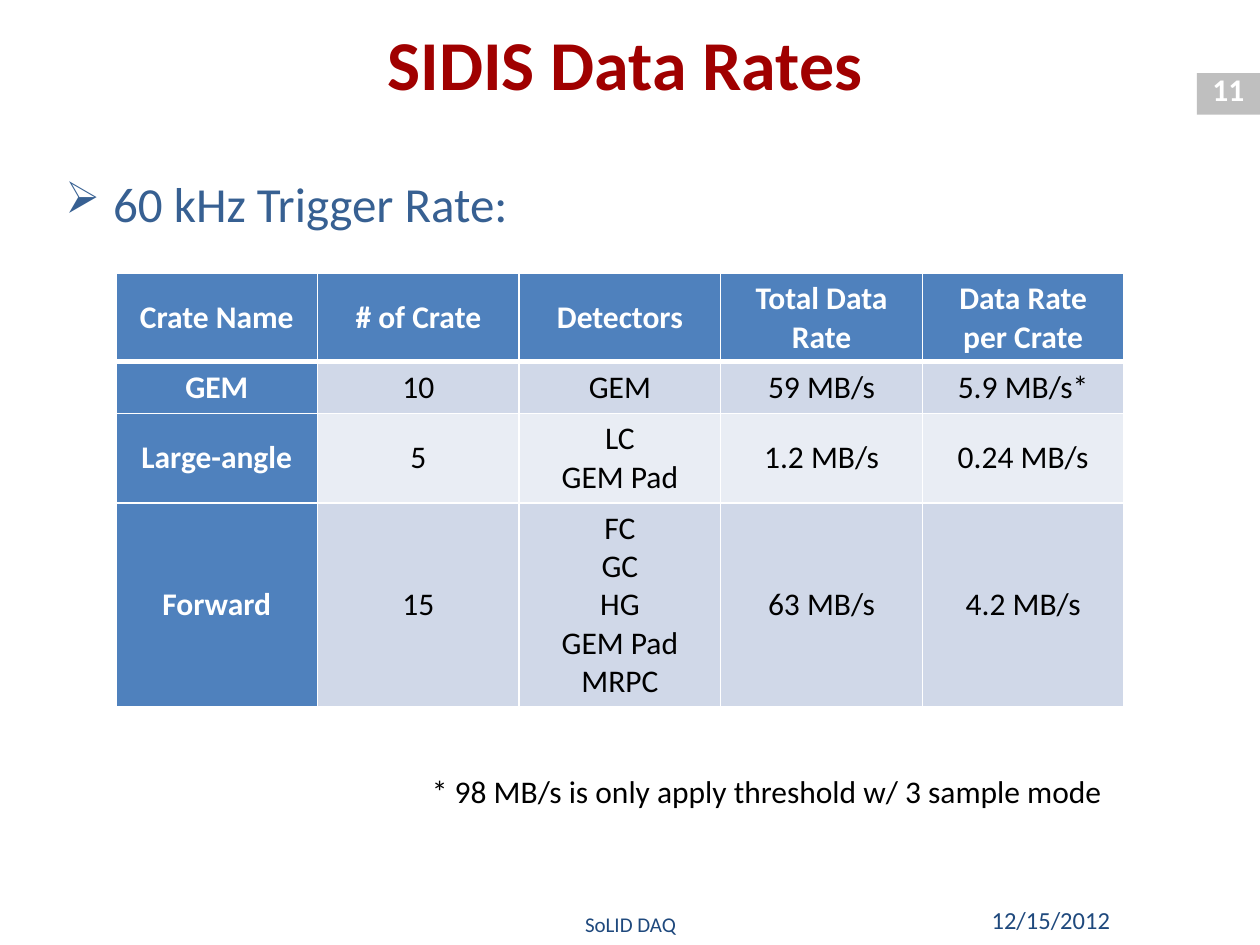
from dataclasses import dataclass

from lxml import etree
from pptx import Presentation
from pptx.dml.color import RGBColor
from pptx.enum.shapes import MSO_SHAPE
from pptx.enum.text import MSO_ANCHOR, PP_ALIGN
from pptx.oxml.ns import qn
from pptx.util import Inches, Pt

LEFT, CENTER, RIGHT = PP_ALIGN.LEFT, PP_ALIGN.CENTER, PP_ALIGN.RIGHT
TOP, MIDDLE = MSO_ANCHOR.TOP, MSO_ANCHOR.MIDDLE
RECTANGLE = MSO_SHAPE.RECTANGLE


@dataclass(frozen=True)
class Theme:
    font: str = "Calibri"
    title: str = "A00000"
    heading: str = "376092"
    footer: str = "1F497D"
    badge: str = "BFBFBF"
    header: str = "4F81BD"
    bands: tuple[str, str] = ("D0D8E8", "E9EDF4")
    black: str = "000000"
    white: str = "FFFFFF"
    title_size: int = 40
    heading_size: int = 28
    body_size: int = 18
    date_size: int = 14
    footer_size: int = 12
    rule: float = 1
    header_rule: float = 3


THEME = Theme()


@dataclass(frozen=True)
class Label:
    text: str
    box: tuple[float, float, float, float]
    size: int
    color: str
    align: PP_ALIGN = LEFT
    anchor: MSO_ANCHOR = TOP
    bold: bool = False
    wrap: bool = True
    bullet: str = ""


@dataclass(frozen=True)
class Row:
    height: float
    cells: tuple[str, ...]


LABELS = (
    Label("11", (9.5, 0.51, 0.5, 0.4), THEME.body_size, THEME.white, CENTER, bold=True),
    Label("60 kHz Trigger Rate:", (0.42, 1.33, 9.17, 5.68), THEME.heading_size,
          THEME.heading, bullet="➢"),
    Label("SIDIS Data Rates", (0.42, 0.08, 9.08, 0.83), THEME.title_size,
          THEME.title, CENTER, MIDDLE, bold=True),
    Label("12/15/2012", (7.58, 7.1, 1.33, 0.4), THEME.date_size, THEME.footer,
          RIGHT, MIDDLE),
    Label("SoLID DAQ", (2.42, 7.17, 5.17, 0.33), THEME.footer_size, THEME.footer,
          CENTER, MIDDLE),
    Label("* 98 MB/s is only apply threshold w/ 3 sample mode",
          (3.33, 6.08, 5.58, 0.4), THEME.body_size, THEME.black, wrap=False),
)

RATES = (
    Row(0.7, ("Crate Name", "# of Crate", "Detectors", "Total Data Rate",
              "Data Rate per Crate")),
    Row(0.41, ("GEM", "10", "GEM", "59 MB/s", "5.9 MB/s*")),
    Row(0.71, ("Large-angle", "5", "LC\nGEM Pad", "1.2 MB/s", "0.24 MB/s")),
    Row(1.62, ("Forward", "15", "FC\nGC\nHG\nGEM Pad\nMRPC", "63 MB/s", "4.2 MB/s")),
)
TABLE_LEFT, TABLE_TOP, COLUMN_WIDTH = 0.92, 2.17, 1.6


def add_run(paragraph, text: str, size: int, color: str, bold: bool) -> None:
    run = paragraph.add_run()
    run.text = text
    run.font.name = THEME.font
    run.font.size = Pt(size)
    run.font.bold = bold
    run.font.color.rgb = RGBColor.from_string(color)


def add_bullet(paragraph, symbol: str) -> None:
    """Give the paragraph a hanging bullet at 90 % of the text size."""
    properties = paragraph._p.get_or_add_pPr()
    properties.set("marL", str(Inches(0.38)))
    properties.set("indent", str(Inches(-0.38)))
    etree.SubElement(properties, qn("a:buSzPct"), val="90000")
    etree.SubElement(properties, qn("a:buChar"), char=symbol)


def add_label(slide, label: Label) -> None:
    frame = slide.shapes.add_textbox(*map(Inches, label.box)).text_frame
    frame.word_wrap = label.wrap
    frame.vertical_anchor = label.anchor
    paragraph = frame.paragraphs[0]
    if label.bullet:
        add_bullet(paragraph, label.bullet)
    paragraph.alignment = label.align
    add_run(paragraph, label.text, label.size, label.color, label.bold)


def add_badge(slide) -> None:
    badge = slide.shapes.add_shape(
        RECTANGLE, Inches(9.5), Inches(0.58), Inches(0.5), Inches(0.33))
    badge.shadow.inherit = False
    badge.fill.solid()
    badge.fill.fore_color.rgb = RGBColor.from_string(THEME.badge)
    badge.line.fill.background()


def set_borders(cell, top: float, bottom: float) -> None:
    """Draw white cell borders; must come before the cell's fill."""
    properties = cell._tc.get_or_add_tcPr()
    widths = {"lnL": THEME.rule, "lnR": THEME.rule, "lnT": top, "lnB": bottom}
    for side, width in widths.items():
        line = etree.SubElement(properties, qn(f"a:{side}"), w=str(Pt(width)))
        fill = etree.SubElement(line, qn("a:solidFill"))
        etree.SubElement(fill, qn("a:srgbClr"), val=THEME.white)


def fill_cell(cell, text: str, row: int, column: int) -> None:
    is_heading = row == 0 or column == 0
    set_borders(cell,
                top=THEME.header_rule if row == 1 else THEME.rule,
                bottom=THEME.header_rule if row == 0 else THEME.rule)
    background = THEME.header if is_heading else THEME.bands[(row - 1) % 2]
    cell.fill.solid()
    cell.fill.fore_color.rgb = RGBColor.from_string(background)
    cell.vertical_anchor = MIDDLE
    frame = cell.text_frame
    for index, line in enumerate(text.split("\n")):
        paragraph = frame.add_paragraph() if index else frame.paragraphs[0]
        paragraph.alignment = CENTER
        add_run(paragraph, line, THEME.body_size,
                THEME.white if is_heading else THEME.black, is_heading)


def add_rate_table(slide, rows: tuple[Row, ...]) -> None:
    column_count = len(rows[0].cells)
    table = slide.shapes.add_table(
        len(rows), column_count, Inches(TABLE_LEFT), Inches(TABLE_TOP),
        Inches(COLUMN_WIDTH * column_count),
        Inches(sum(row.height for row in rows))).table
    table.first_col = True
    for column in table.columns:
        column.width = Inches(COLUMN_WIDTH)
    for row_index, row in enumerate(rows):
        table.rows[row_index].height = Inches(row.height)
        for column_index, text in enumerate(row.cells):
            fill_cell(table.cell(row_index, column_index), text, row_index, column_index)


def main() -> None:
    presentation = Presentation()
    presentation.slide_width = Inches(10)
    presentation.slide_height = Inches(7.5)
    slide = presentation.slides.add_slide(presentation.slide_layouts[6])
    add_badge(slide)
    for label in LABELS:
        add_label(slide, label)
    add_rate_table(slide, RATES)
    presentation.save("out.pptx")


if __name__ == "__main__":
    main()
